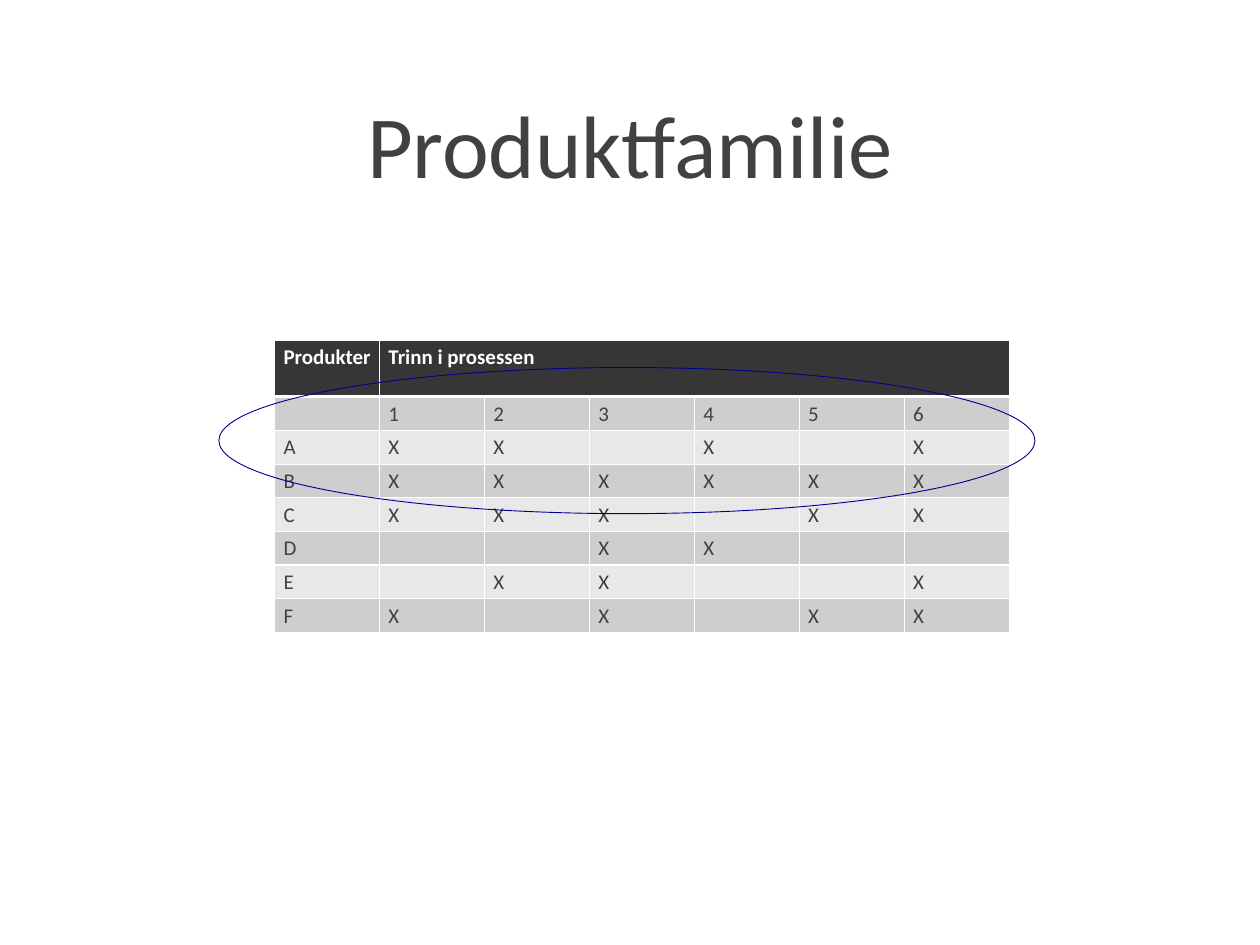
from dataclasses import dataclass

from lxml import etree
from pptx import Presentation
from pptx.dml.color import RGBColor
from pptx.enum.shapes import MSO_SHAPE
from pptx.enum.text import MSO_ANCHOR, PP_ALIGN
from pptx.oxml.ns import qn
from pptx.util import Inches, Pt

OVAL = MSO_SHAPE.OVAL
MIDDLE = MSO_ANCHOR.MIDDLE
LEFT, CENTER = PP_ALIGN.LEFT, PP_ALIGN.CENTER

WHITE = RGBColor(0xFF, 0xFF, 0xFF)
TEXT = RGBColor(0x41, 0x41, 0x41)
HEADER = RGBColor(0x36, 0x36, 0x36)
DARK_BAND = RGBColor(0xCE, 0xCE, 0xCE)
LIGHT_BAND = RGBColor(0xE8, 0xE8, 0xE8)
NAVY = RGBColor(0x00, 0x00, 0x90)

FONT = "Calibri"
CELL_SIZE = 17
STEPS = range(1, 7)


@dataclass(frozen=True)
class Product:
    name: str
    steps: tuple[int, ...]

    def row(self) -> list[str]:
        return [self.name] + ["X" if n in self.steps else "" for n in STEPS]


PRODUCTS = [
    Product("A", (1, 2, 4, 6)),
    Product("B", (1, 2, 3, 4, 5, 6)),
    Product("C", (1, 2, 3, 5, 6)),
    Product("D", (3, 4)),
    Product("E", (2, 3, 6)),
    Product("F", (1, 3, 5, 6)),
]


def write(tf, text: str, *, size: float, color: RGBColor, bold: bool = False, align=LEFT) -> None:
    p = tf.paragraphs[0]
    p.alignment = align
    if not text:
        p._p.get_or_add_endParaRPr().set("sz", str(size * 100))
        return
    r = p.add_run()
    r.text = text
    r.font.name = FONT
    r.font.size = Pt(size)
    r.font.bold = bold
    r.font.color.rgb = color


def set_borders(cell, bottom: float) -> None:
    tc_pr = cell._tc.get_or_add_tcPr()
    widths = {"a:lnL": 1, "a:lnR": 1, "a:lnT": 1, "a:lnB": bottom}
    for i, (tag, width) in enumerate(widths.items()):
        ln = etree.Element(qn(tag), w=str(Pt(width)))
        fill = etree.SubElement(ln, qn("a:solidFill"))
        etree.SubElement(fill, qn("a:srgbClr"), val=str(WHITE))
        tc_pr.insert(i, ln)


def format_cell(cell, text: str, row: int) -> None:
    is_header = row == 0
    cell.margin_left, cell.margin_right = Inches(0.1), Inches(0.08)
    cell.margin_top, cell.margin_bottom = Inches(0.05), Inches(0.04)
    cell.fill.solid()
    cell.fill.fore_color.rgb = HEADER if is_header else DARK_BAND if row % 2 else LIGHT_BAND
    set_borders(cell, bottom=3 if is_header else 1)
    write(cell.text_frame, text, size=CELL_SIZE, color=WHITE if is_header else TEXT, bold=is_header)


def add_title(s) -> None:
    sp = s.shapes.title
    sp.left, sp.top, sp.width, sp.height = Inches(0.39), Inches(0.28), Inches(13.44), Inches(2.67)
    tf = sp.text_frame
    tf.vertical_anchor = MIDDLE
    tf.margin_left = tf.margin_right = tf.margin_top = tf.margin_bottom = Inches(0.06)
    write(tf, "Produktfamilie", size=72, color=TEXT, align=CENTER)


def add_product_table(s) -> None:
    header = ["Produkter", "Trinn i prosessen"] + [""] * (len(STEPS) - 1)
    numbers = [""] + [str(n) for n in STEPS]
    rows = [header, numbers] + [product.row() for product in PRODUCTS]
    table = s.shapes.add_table(
        len(rows), len(header), Inches(3.1), Inches(3.84), Inches(8.29), Inches(3.3)
    ).table
    for i, row in enumerate(rows):
        table.rows[i].height = Inches(0.38 if i else 0.64)
        for j, text in enumerate(row):
            format_cell(table.cell(i, j), text, i)
    table.cell(0, 1).merge(table.cell(0, len(STEPS)))


def add_family_ellipse(s) -> None:
    sp = s.shapes.add_shape(OVAL, Inches(2.47), Inches(4.15), Inches(9.21), Inches(1.65))
    sp.shadow.inherit = False
    sp.fill.background()
    sp.line.color.rgb = NAVY
    sp.line.width = Pt(0.75)


def main() -> None:
    prs = Presentation()
    prs.slide_width, prs.slide_height = Inches(14.22), Inches(10.67)
    s = prs.slides.add_slide(prs.slide_layouts[5])
    add_title(s)
    add_product_table(s)
    add_family_ellipse(s)
    prs.save("out.pptx")


if __name__ == "__main__":
    main()
